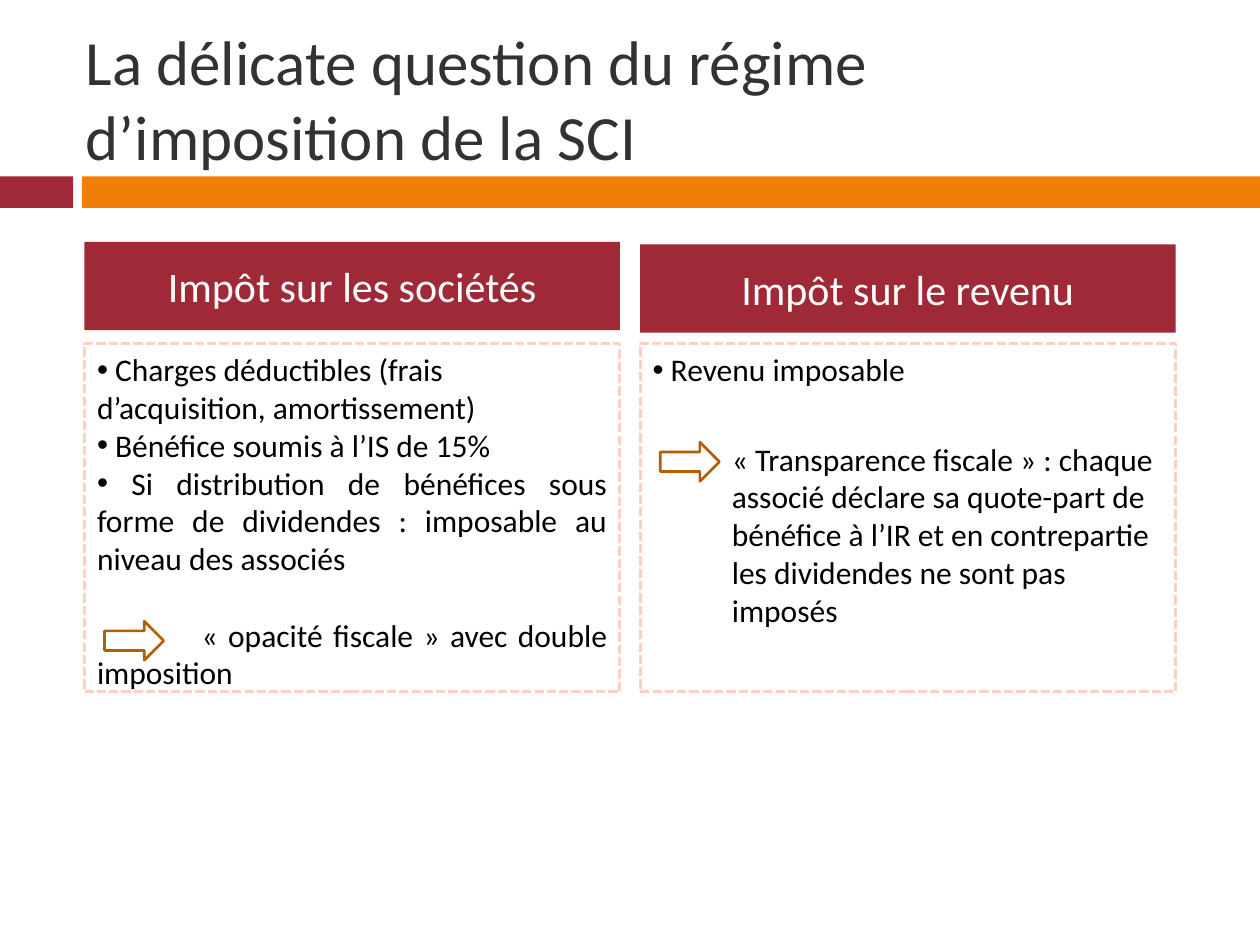
from lxml.etree import SubElement
from pptx import Presentation
from pptx.dml.color import RGBColor
from pptx.enum.dml import MSO_LINE
from pptx.enum.shapes import MSO_SHAPE
from pptx.enum.text import MSO_ANCHOR, MSO_AUTO_SIZE, PP_ALIGN
from pptx.oxml.ns import qn
from pptx.util import Inches, Pt

CRIMSON = RGBColor(0x9F, 0x29, 0x36)
ORANGE = RGBColor(0xF0, 0x7F, 0x09)
BROWN = RGBColor(0xB2, 0x5E, 0x07)
PEACH = RGBColor(0xFF, 0xD0, 0xBF)
CHARCOAL = RGBColor(0x32, 0x32, 0x32)
WHITE = RGBColor(0xFF, 0xFF, 0xFF)
BLACK = RGBColor(0, 0, 0)

COLUMN_LEFTS = (0.67, 5.08)
COLUMN_WIDTH = 4.25
FRAME_TOP = 2.73


def write_paragraph(paragraph, text, size=18, color=BLACK, align=PP_ALIGN.LEFT,
                    before=0, first_indent=0, bullet=None):
    paragraph.alignment = align
    paragraph.space_before = Pt(before)
    properties = paragraph._p.get_or_add_pPr()
    properties.set("marL", "0")
    properties.set("indent", str(Inches(first_indent)))
    if bullet:
        SubElement(properties, qn("a:buFont"), typeface="Arial")
        SubElement(properties, qn("a:buChar"), char=bullet)
    else:
        SubElement(properties, qn("a:buNone"))
    run = paragraph.add_run()
    run.text = text
    run.font.name = "Calibri"
    run.font.size = Pt(size)
    run.font.bold = False
    run.font.color.rgb = color


class SlideBuilder:
    def __init__(self, slide):
        self.slide = slide

    def fill_text(self, shape, paragraphs, anchor):
        frame = shape.text_frame
        frame.word_wrap = True
        frame.auto_size = MSO_AUTO_SIZE.NONE
        frame.vertical_anchor = anchor
        for index, (text, style) in enumerate(paragraphs):
            paragraph = frame.add_paragraph() if index else frame.paragraphs[0]
            write_paragraph(paragraph, text, **style)

    def placeholder(self, index, box, paragraphs, anchor=MSO_ANCHOR.TOP, fill=None):
        shape = self.slide.placeholders[index]
        shape.left, shape.top, shape.width, shape.height = map(Inches, box)
        if fill is not None:
            shape.fill.solid()
            shape.fill.fore_color.rgb = fill
        self.fill_text(shape, paragraphs, anchor)

    def text_box(self, box, paragraphs):
        shape = self.slide.shapes.add_textbox(*map(Inches, box))
        self.fill_text(shape, paragraphs, MSO_ANCHOR.TOP)

    def bar(self, box, color):
        shape = self.slide.shapes.add_shape(MSO_SHAPE.RECTANGLE, *map(Inches, box))
        shape.shadow.inherit = False
        shape.fill.solid()
        shape.fill.fore_color.rgb = color
        shape.line.fill.background()

    def outline(self, kind, box, color, width, dash=None):
        shape = self.slide.shapes.add_shape(kind, *map(Inches, box))
        shape.shadow.inherit = False
        shape.fill.background()
        shape.line.color.rgb = color
        shape.line.width = Pt(width)
        if dash is not None:
            shape.line.dash_style = dash

    def arrow(self, left, top):
        self.outline(MSO_SHAPE.RIGHT_ARROW, (left, top, 0.47, 0.31), BROWN, 1.5)


def main():
    presentation = Presentation()
    presentation.slide_width = Inches(10)
    presentation.slide_height = Inches(7.5)
    builder = SlideBuilder(presentation.slides.add_slide(presentation.slide_layouts[4]))
    left_column, right_column = COLUMN_LEFTS

    builder.bar((0, 1.4, 0.58, 0.25), CRIMSON)
    builder.bar((0.65, 1.4, 9.35, 0.25), ORANGE)
    builder.placeholder(
        0, (0.58, 0.3, 8.92, 0.95),
        [("La délicate question du régime d’imposition de la SCI",
          dict(size=36, color=CHARCOAL))], MSO_ANCHOR.MIDDLE)

    headings = ((1, left_column, 1.92, "Impôt sur les sociétés"),
                (3, right_column, 1.94, "Impôt sur le revenu"))
    for index, left, top, heading in headings:
        builder.placeholder(
            index, (left, top, COLUMN_WIDTH, 0.7),
            [(heading, dict(size=24, color=WHITE, align=PP_ALIGN.CENTER, before=7))],
            MSO_ANCHOR.MIDDLE, CRIMSON)
        builder.outline(MSO_SHAPE.RECTANGLE, (left, FRAME_TOP, COLUMN_WIDTH, 2.76),
                        PEACH, 1.75, MSO_LINE.SQUARE_DOT)

    justified = dict(align=PP_ALIGN.JUSTIFY)
    bulleted = dict(bullet="•")
    builder.placeholder(2, (left_column, FRAME_TOP, COLUMN_WIDTH, 2.83), [
        (" Charges déductibles (frais d’acquisition, amortissement)", bulleted),
        (" Bénéfice soumis à l’IS de 15%", justified | bulleted),
        (" Si distribution de bénéfices sous forme de dividendes : "
         "imposable au niveau des associés", justified | bulleted),
        ("« opacité fiscale » avec double imposition",
         justified | dict(before=22, first_indent=0.83)),
    ])
    builder.arrow(0.83, 4.93)

    builder.placeholder(4, (right_column, FRAME_TOP, 2.99, 0.4),
                        [(" Revenu imposable", bulleted)])
    builder.text_box((5.71, 3.44, 3.62, 1.62), [
        ("« Transparence fiscale » : chaque associé déclare sa quote-part de bénéfice "
         "à l’IR et en contrepartie les dividendes ne sont pas imposés", {})])
    builder.arrow(5.24, 3.51)

    presentation.save("out.pptx")


if __name__ == "__main__":
    main()
